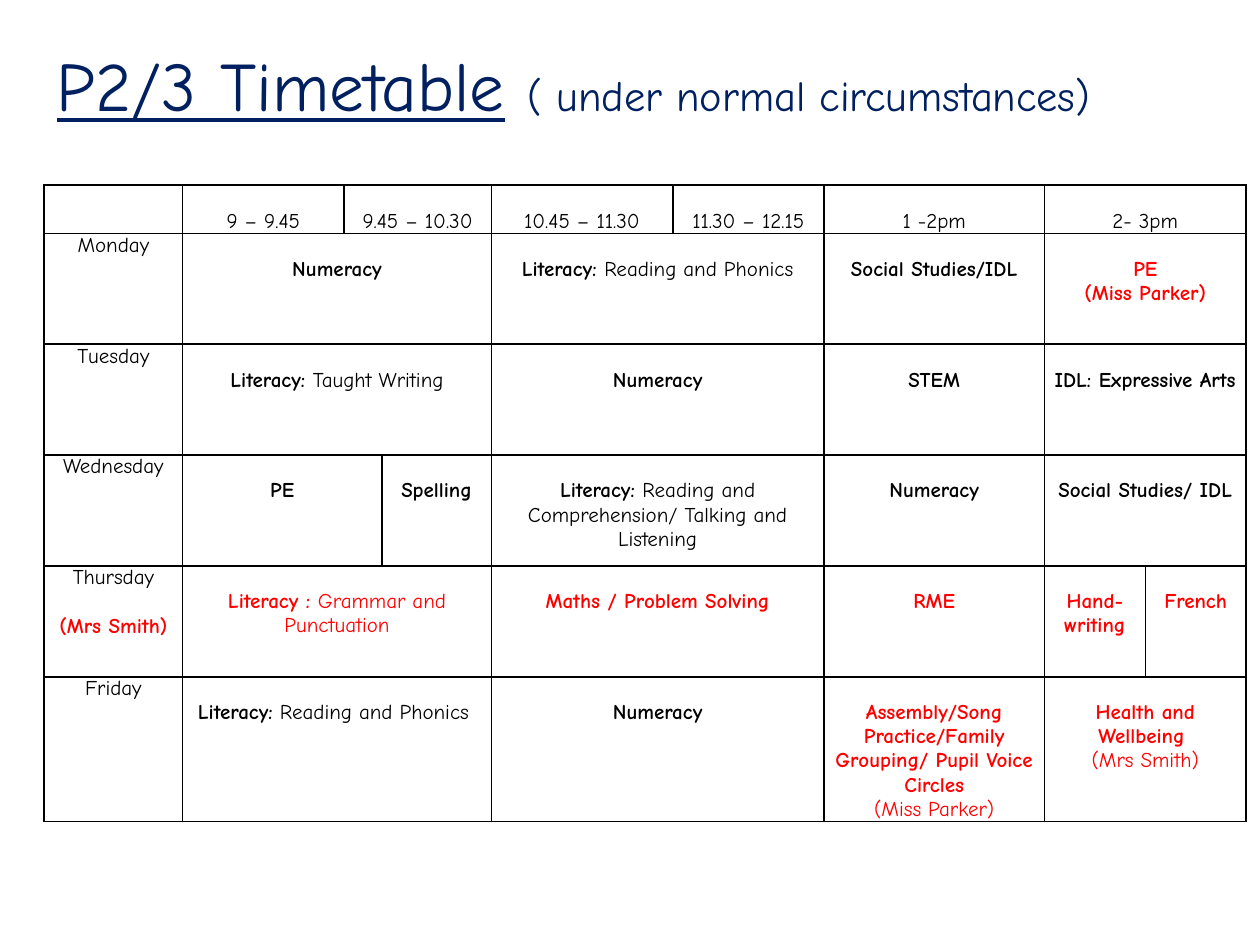
from lxml.etree import SubElement
from pptx import Presentation
from pptx.dml.color import RGBColor
from pptx.enum.text import MSO_ANCHOR, PP_ALIGN
from pptx.oxml.ns import qn
from pptx.util import Inches, Pt

FONT = "Comic Neue"
NAVY = RGBColor(0x00, 0x20, 0x60)
BLACK = RGBColor(0x00, 0x00, 0x00)
RED = RGBColor(0xFF, 0x00, 0x00)


def add_borders(cell):
    properties = cell._tc.get_or_add_tcPr()
    for side in ("a:lnL", "a:lnR", "a:lnT", "a:lnB"):
        line = SubElement(properties, qn(side), w=str(Pt(1)))
        fill = SubElement(line, qn("a:solidFill"))
        SubElement(fill, qn("a:srgbClr"), val=str(BLACK))


def write_line(paragraph, bold, plain, color):
    paragraph.alignment = PP_ALIGN.CENTER
    paragraph.font.name = FONT
    paragraph.font.size = Pt(12)
    paragraph.font.color.rgb = color
    for text, is_bold in ((bold, True), (plain, False)):
        if text:
            run = paragraph.add_run()
            run.text = text
            run.font.bold = is_bold


prs = Presentation()
prs.slide_width, prs.slide_height = Inches(10), Inches(7.5)
slide = prs.slides.add_slide(prs.slide_layouts[5])

# Title
title = slide.shapes.title
title.left, title.top = Inches(0.35), Inches(0.21)
title.width, title.height = Inches(9.29), Inches(0.91)
title.text_frame.vertical_anchor = MSO_ANCHOR.MIDDLE
heading = title.text_frame.paragraphs[0]
heading.alignment = PP_ALIGN.LEFT
heading.font.name = FONT
heading.font.color.rgb = NAVY
for text, size, underlined in (
    ("P2/3 Timetable", 39.6, True),
    (" ", 39.6, False),
    ("( under normal circumstances)", 24.3, False),
):
    run = heading.add_run()
    run.text = text
    run.font.size = Pt(size)
    run.font.underline = underlined

# Empty timetable grid
column_widths = [1.1, 1.28, 0.3, 0.87, 1.44, 1.2, 1.75, 0.8, 0.8]
row_heights = [0.38, 0.88, 0.88, 0.88, 0.88, 1.1]
frame = slide.shapes.add_table(
    len(row_heights), len(column_widths),
    Inches(0.35), Inches(1.47), Inches(sum(column_widths)), Inches(sum(row_heights)))
timetable = frame.table
timetable.first_row = timetable.horz_banding = False
for column, width in zip(timetable.columns, column_widths):
    column.width = Inches(width)
for row, height in zip(timetable.rows, row_heights):
    row.height = Inches(height)
for cell in timetable.iter_cells():
    add_borders(cell)
    cell.fill.background()
    cell.margin_left = cell.margin_right = Inches(0.05)
    cell.margin_top = cell.margin_bottom = 0

# Days, with the Thursday teacher below the day
days = ["Monday", "Tuesday", "Wednesday", "Thursday", "Friday"]
for row, day in enumerate(days, start=1):
    day_text = timetable.cell(row, 0).text_frame
    write_line(day_text.paragraphs[0], "", day, BLACK)
    if day == "Thursday":
        teacher = day_text.add_paragraph()
        teacher.space_before = Pt(14)
        write_line(teacher, "(Mrs Smith)", "", RED)

# Lessons per row: columns spanned, colour, lines of (bold, plain) text
lessons = [
    [(1, BLACK, [("", "9 – 9.45")]),
     (2, BLACK, [("", "9.45 – 10.30")]),
     (1, BLACK, [("", "10.45 – 11.30")]),
     (1, BLACK, [("", "11.30 – 12.15")]),
     (1, BLACK, [("", "1 -2pm")]),
     (2, BLACK, [("", "2- 3pm")])],
    [(3, BLACK, [("Numeracy", "")]),
     (2, BLACK, [("Literacy: ", "Reading and Phonics")]),
     (1, BLACK, [("Social Studies/IDL", "")]),
     (2, RED, [("PE", ""), ("(Miss Parker)", "")])],
    [(3, BLACK, [("Literacy: ", "Taught Writing")]),
     (2, BLACK, [("Numeracy", "")]),
     (1, BLACK, [("STEM", "")]),
     (2, BLACK, [("IDL: Expressive Arts", "")])],
    [(2, BLACK, [("PE", "")]),
     (1, BLACK, [("Spelling", "")]),
     (2, BLACK, [("Literacy: ", "Reading and Comprehension/ Talking and Listening")]),
     (1, BLACK, [("Numeracy", "")]),
     (2, BLACK, [("Social Studies/ IDL", "")])],
    [(3, RED, [("Literacy : ", "Grammar and Punctuation")]),
     (2, RED, [("Maths / Problem Solving", "")]),
     (1, RED, [("RME", "")]),
     (1, RED, [("Hand-writing", "")]),
     (1, RED, [("French", "")])],
    [(3, BLACK, [("Literacy:", " Reading and Phonics ")]),
     (2, BLACK, [("Numeracy", "")]),
     (1, RED, [("Assembly/Song Practice/Family Grouping/ Pupil Voice Circles", ""),
               ("", "(Miss Parker)")]),
     (2, RED, [("Health and Wellbeing ", ""), ("", "(Mrs Smith)")])],
]
for row, row_lessons in enumerate(lessons):
    column = 1
    for span, color, lines in row_lessons:
        cell = timetable.cell(row, column)
        if span > 1:
            cell.merge(timetable.cell(row, column + span - 1))
        cell.margin_top = Inches(0.19)
        for index, (bold, plain) in enumerate(lines):
            text_frame = cell.text_frame
            paragraph = text_frame.add_paragraph() if index else text_frame.paragraphs[0]
            write_line(paragraph, bold, plain, color)
        column += span

prs.save("out.pptx")
